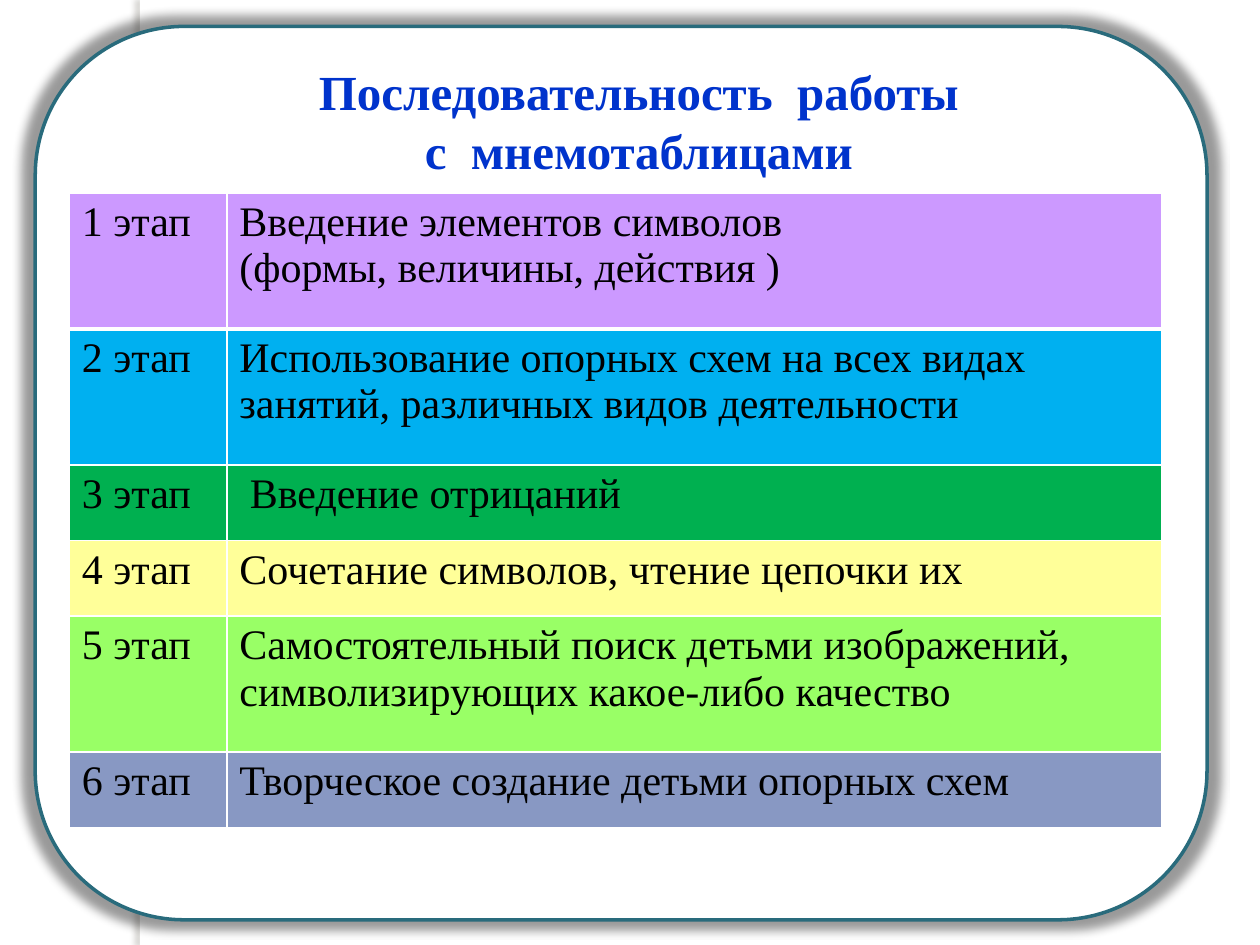
from dataclasses import dataclass

from lxml import etree
from pptx import Presentation
from pptx.dml.color import RGBColor
from pptx.enum.shapes import MSO_SHAPE
from pptx.enum.text import MSO_ANCHOR, MSO_AUTO_SIZE, PP_ALIGN
from pptx.oxml.ns import qn
from pptx.util import Inches, Pt

RECTANGLE = MSO_SHAPE.RECTANGLE
ROUNDED = MSO_SHAPE.ROUNDED_RECTANGLE
TOP = MSO_ANCHOR.TOP
CENTER = PP_ALIGN.CENTER
GROW = MSO_AUTO_SIZE.SHAPE_TO_FIT_TEXT
TITLE_ONLY = 5
COLUMNS, ROWS = 100, 75


@dataclass(frozen=True)
class Theme:
    font: str = "Times New Roman"
    title_size: int = 28
    table_size: int = 24
    title: str = "0033CC"
    text: str = "000000"
    white: str = "FFFFFF"
    frame_line: str = "296B7C"
    strip_shadow: str = "736F63"
    frame_shadow: str = "000000"


def child(parent, tag, **attributes):
    values = {name: str(value) for name, value in attributes.items()}
    return etree.SubElement(parent, qn(tag), values)


class SlideBuilder:
    """Places elements on a grid of 100 columns by 75 rows."""

    def __init__(self, deck, theme):
        self.theme = theme
        self.column = deck.slide_width / COLUMNS
        self.row = deck.slide_height / ROWS
        self.slide = deck.slides.add_slide(deck.slide_layouts[TITLE_ONLY])

    def place(self, left, top, width, height):
        return [round(share * unit) for share, unit in zip(
            (left, top, width, height), (self.column, self.row) * 2)]

    def fill_text(self, frame, lines, size, color, bold=False, align=None):
        values = {"name": self.theme.font, "size": Pt(size), "bold": bold}
        for index, line in enumerate(lines):
            para = frame.paragraphs[0] if index == 0 else frame.add_paragraph()
            para.alignment = align
            span = para.add_run()
            span.text = line
            for name, value in values.items():
                setattr(span.font, name, value)
            span.font.color.rgb = RGBColor.from_string(color)

    def panel(self, kind, area, shadow, line=None):
        box = self.slide.shapes.add_shape(kind, *self.place(*area))
        box.fill.solid()
        box.fill.fore_color.rgb = RGBColor.from_string(self.theme.white)
        if line:
            box.line.color.rgb = RGBColor.from_string(line)
            box.line.width = Pt(2)
        else:
            box.line.fill.background()
        self.shadow(box, **shadow)
        return box

    def shadow(self, box, color, opacity, **geometry):
        box.shadow.inherit = False
        effects = box.element.spPr.find(qn("a:effectLst"))
        outer = child(effects, "a:outerShdw", **geometry, rotWithShape=0)
        tint = child(outer, "a:srgbClr", val=color)
        child(tint, "a:alpha", val=opacity * 1000)

    def title(self, lines, area):
        box = self.slide.shapes.title
        box.left, box.top, box.width, box.height = self.place(*area)
        frame = box.text_frame
        values = {"word_wrap": True, "auto_size": GROW, "vertical_anchor": TOP,
                  "margin_left": Inches(0.25), "margin_right": Inches(0.1)}
        for name, value in values.items():
            setattr(frame, name, value)
        self.fill_text(frame, lines, self.theme.title_size, self.theme.title,
                       bold=True, align=CENTER)
        # Bring the title in front of the panels
        box.element.getparent().append(box.element)

    def table(self, stages, corner, widths):
        heights = [height for _, height, _ in stages]
        area = (*corner, sum(widths), sum(heights))
        table = self.slide.shapes.add_table(
            len(stages), len(widths), *self.place(*area)).table
        table.horz_banding = table.first_row = False
        for column, width in zip(table.columns, widths):
            column.width = round(width * self.column)
        for index, (color, height, lines) in enumerate(stages):
            table.rows[index].height = round(height * self.row)
            for position, content in enumerate(([f"{index + 1} этап"], lines)):
                cell = table.cell(index, position)
                cell.fill.solid()
                cell.fill.fore_color.rgb = RGBColor.from_string(color)
                self.fill_text(cell.text_frame, content,
                               self.theme.table_size, self.theme.text)
                self.borders(cell, top=3 if index == 1 else 1,
                             bottom=3 if index == 0 else 1)

    def borders(self, cell, top, bottom):
        properties = cell._tc.get_or_add_tcPr()
        sides = {"a:lnL": 1, "a:lnR": 1, "a:lnT": top, "a:lnB": bottom}
        for index, (tag, width) in enumerate(sides.items()):
            line = child(properties, tag, w=int(Pt(width)))
            child(child(line, "a:solidFill"), "a:srgbClr", val=self.theme.white)
            properties.insert(index, line)


def main():
    deck = Presentation()
    deck.slide_width, deck.slide_height = Inches(10), Inches(7.5)
    theme = Theme()
    builder = SlideBuilder(deck, theme)

    # Background strip and rounded frame
    builder.panel(RECTANGLE, (11.1, 0, 0.8, ROWS), {
        "color": theme.strip_shadow, "opacity": 25, "blurRad": int(Pt(3)),
        "dist": int(Pt(3)), "dir": 180 * 60000})
    builder.panel(ROUNDED, (2.8, 2.1, 93, 70.9), {
        "color": theme.frame_shadow, "opacity": 40, "blurRad": int(Pt(5)),
        "dist": 0, "dir": 0, "sx": 102000, "sy": 102000, "algn": "ctr"},
        line=theme.frame_line)

    # Title
    builder.title(["Последовательность  работы", "с  мнемотаблицами"],
                  (3.5, 4.4, 92.9, 10.4))

    # Stages: fill colour, row height, description
    tall, short = 10.8, 6
    builder.table([
        ("CC99FF", tall, ["Введение элементов символов",
                          "(формы, величины, действия )"]),
        ("00B0F0", tall, ["Использование опорных схем на всех видах "
                          "занятий, различных видов деятельности"]),
        ("00B050", short, [" Введение отрицаний"]),
        ("FFFF99", short, ["Сочетание символов, чтение цепочки их"]),
        ("99FF66", tall, ["Самостоятельный поиск детьми изображений, "
                          "символизирующих какое-либо качество"]),
        ("8898C3", short, ["Творческое создание детьми опорных схем"]),
    ], corner=(5.5, 15.3), widths=(12.5, 74.2))

    deck.save("out.pptx")


if __name__ == "__main__":
    main()
